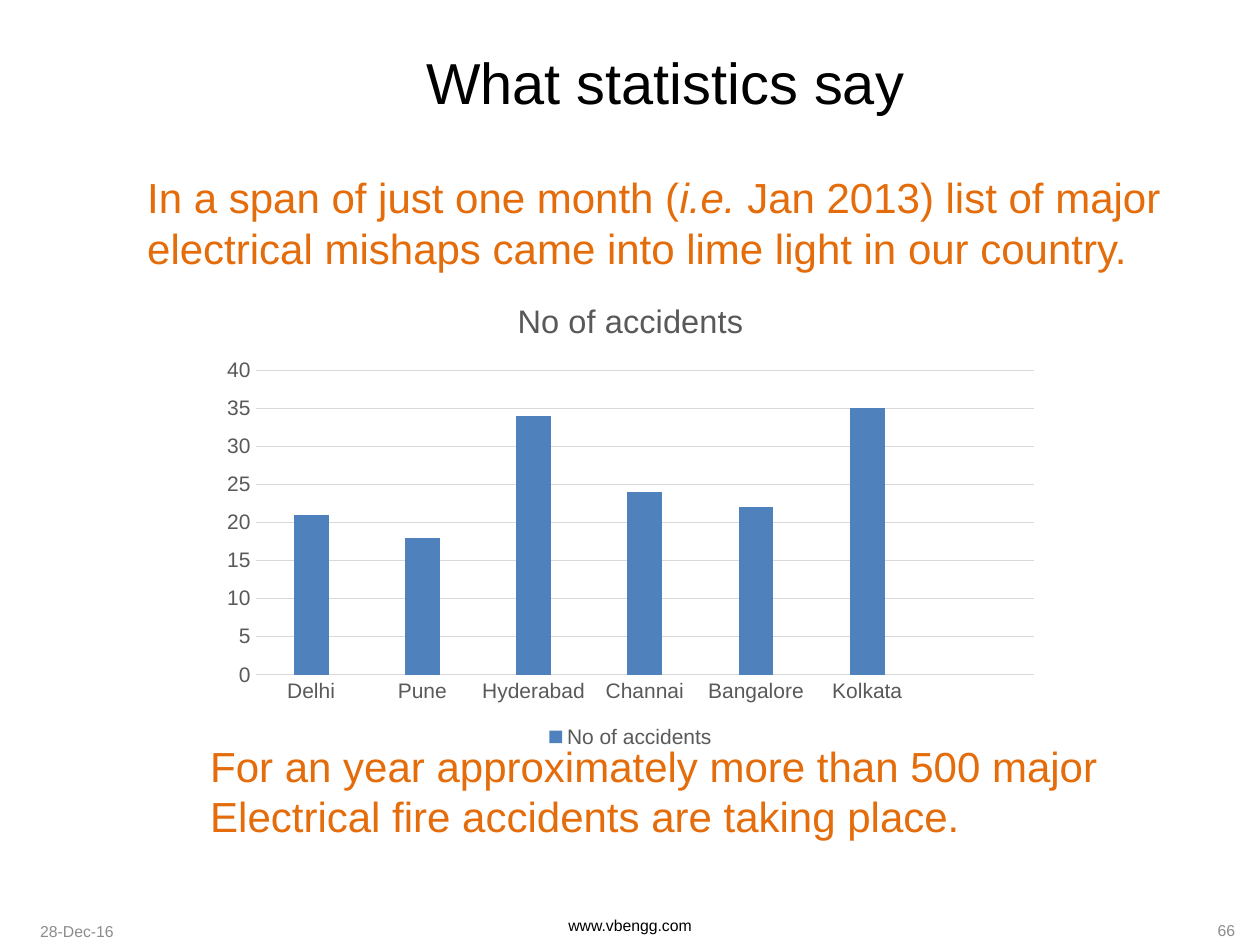
"""Build the slide on electrical accident statistics."""
from pptx import Presentation
from pptx.chart.data import CategoryChartData
from pptx.dml.color import RGBColor
from pptx.enum.chart import XL_CHART_TYPE, XL_LEGEND_POSITION, XL_TICK_MARK
from pptx.enum.text import MSO_ANCHOR, PP_ALIGN
from pptx.util import Inches, Pt

COLUMNS, BOTTOM = XL_CHART_TYPE.COLUMN_CLUSTERED, XL_LEGEND_POSITION.BOTTOM
NO_TICK = XL_TICK_MARK.NONE
TOP, MIDDLE = MSO_ANCHOR.TOP, MSO_ANCHOR.MIDDLE
LEFT, CENTER, RIGHT = PP_ALIGN.LEFT, PP_ALIGN.CENTER, PP_ALIGN.RIGHT

WIDTH, HEIGHT = 10, 7.5
THEME = {
    "font": "Arial",
    "title": (33, "000000"),
    "body": (24, "E46C0A"),
    "footer": (9, "8C8C8C"),
    "site": (9, "000000"),
    "chart": (12, "595959"),
    "chart_title": (18.6, "595959"),
    "bar": "4F81BD",
    "grid": "D9D9D9",
}

INTRO = [[("In a span of just one month (", False), ("i.e. ", True),
          ("Jan 2013) list of major electrical mishaps came into lime light in our country.", False)]]
YEARLY = [[("For an year approximately more than 500 major", False)],
          [("Electrical fire accidents are taking place.", False)]]
TITLE = [[("What statistics say", False)]]
DATE = [[("28-Dec-16", False)]]
SITE = [[("www.vbengg.com", False)]]
NUMBER = [[("66", False)]]

TEXTS_BEHIND = [
    (INTRO, (0.107, 0.175, 0.892, 0.121), "body", {"vertical_anchor": TOP, "word_wrap": True}, {"alignment": LEFT}),
    (YEARLY, (0.157, 0.777, 0.741, 0.121), "body", {"vertical_anchor": TOP, "word_wrap": False}, {"alignment": LEFT}),
    (TITLE, (0.139, 0.049, 0.778, 0.084), "title", {"vertical_anchor": MIDDLE, "word_wrap": True},
     {"alignment": CENTER, "line_spacing": 0.9}),
]
FOOTERS = [
    (DATE, (0.022, 0.959, 0.225, 0.053), "footer", LEFT),
    (SITE, (0.331, 0.953, 0.338, 0.053), "site", CENTER),
    (NUMBER, (0.765, 0.959, 0.225, 0.051), "footer", RIGHT),
]
ACCIDENTS = "No of accidents"
CITIES = [("Delhi", 21), ("Pune", 18), ("Hyderabad", 34), ("Channai", 24),
          ("Bangalore", 22), ("Kolkata", 35), ("", None)]
CHART_SHARES = (0.167, 0.293, 0.667, 0.504)


def place(shares):
    return [Inches(share * side) for share, side in zip(shares, (WIDTH, HEIGHT) * 2)]


def apply(target, values):
    for attribute, value in values.items():
        setattr(target, attribute, value)


def style(font, role):
    size, color = THEME[role]
    apply(font, {"name": THEME["font"], "size": Pt(size), "bold": False})
    font.color.rgb = RGBColor.from_string(color)


def add_text(slide, paragraphs, shares, role, frame_format, paragraph_format):
    frame = slide.shapes.add_textbox(*place(shares)).text_frame
    apply(frame, frame_format)
    for index, runs in enumerate(paragraphs):
        paragraph = frame.add_paragraph() if index else frame.paragraphs[0]
        apply(paragraph, paragraph_format)
        for words, italic in runs:
            run = paragraph.add_run()
            run.text = words
            style(run.font, role)
            run.font.italic = italic


def draw_line(line):
    line.color.rgb = RGBColor.from_string(THEME["grid"])
    line.width = Pt(0.75)


def add_accident_chart(slide):
    data = CategoryChartData()
    data.categories = [city for city, _ in CITIES]
    data.add_series(ACCIDENTS, [count for _, count in CITIES])
    chart = slide.shapes.add_chart(COLUMNS, *place(CHART_SHARES), data).chart
    style(chart.font, "chart")

    apply(chart, {"has_title": True, "has_legend": True})
    heading = chart.chart_title.text_frame
    heading.text = ACCIDENTS
    style(heading.paragraphs[0].runs[0].font, "chart_title")
    apply(chart.legend, {"position": BOTTOM, "include_in_layout": False})
    style(chart.legend.font, "chart")

    bars = chart.plots[0]
    apply(bars, {"gap_width": 219, "overlap": -27, "vary_by_categories": False})
    fill = bars.series[0].format.fill
    fill.solid()
    fill.fore_color.rgb = RGBColor.from_string(THEME["bar"])

    cities, counts = chart.category_axis, chart.value_axis
    for axis in (cities, counts):
        apply(axis, {"major_tick_mark": NO_TICK, "minor_tick_mark": NO_TICK})
        style(axis.tick_labels.font, "chart")
    apply(counts, {"minimum_scale": 0, "maximum_scale": 40, "major_unit": 5})
    draw_line(cities.format.line)
    draw_line(counts.major_gridlines.format.line)
    counts.format.line.fill.background()


def main():
    deck = Presentation()
    apply(deck, {"slide_width": Inches(WIDTH), "slide_height": Inches(HEIGHT)})
    slide = deck.slides.add_slide(deck.slide_layouts[6])
    for text in TEXTS_BEHIND:
        add_text(slide, *text)
    add_accident_chart(slide)
    for words, shares, role, alignment in FOOTERS:
        add_text(slide, words, shares, role, {"vertical_anchor": MIDDLE, "word_wrap": True},
                 {"alignment": alignment})
    deck.save("out.pptx")


if __name__ == "__main__":
    main()
